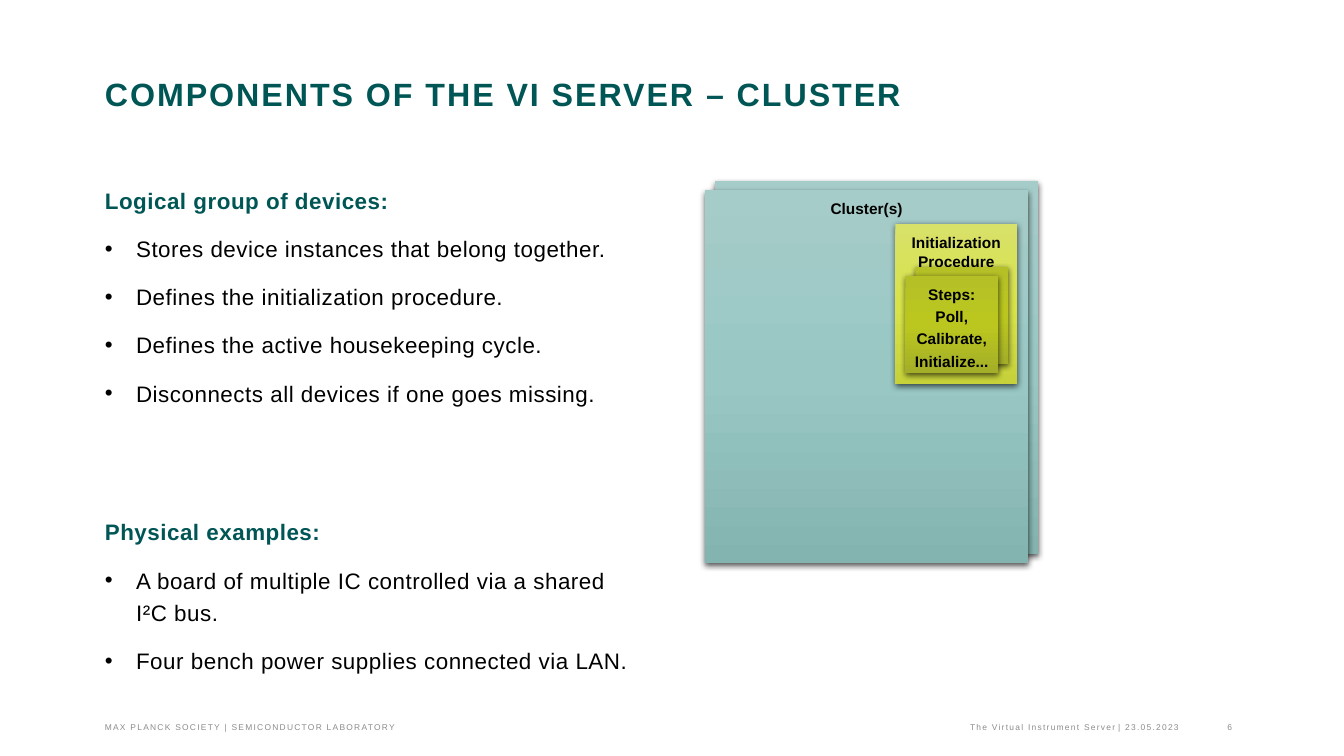
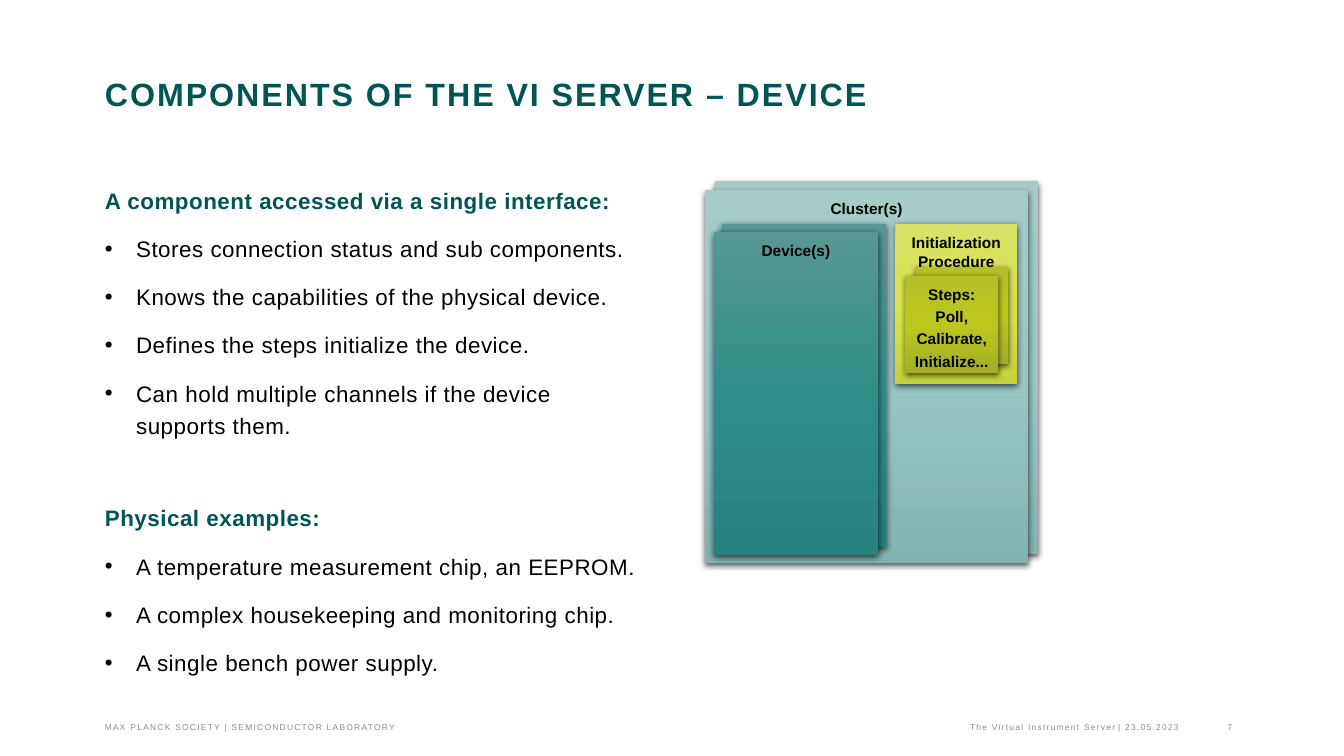
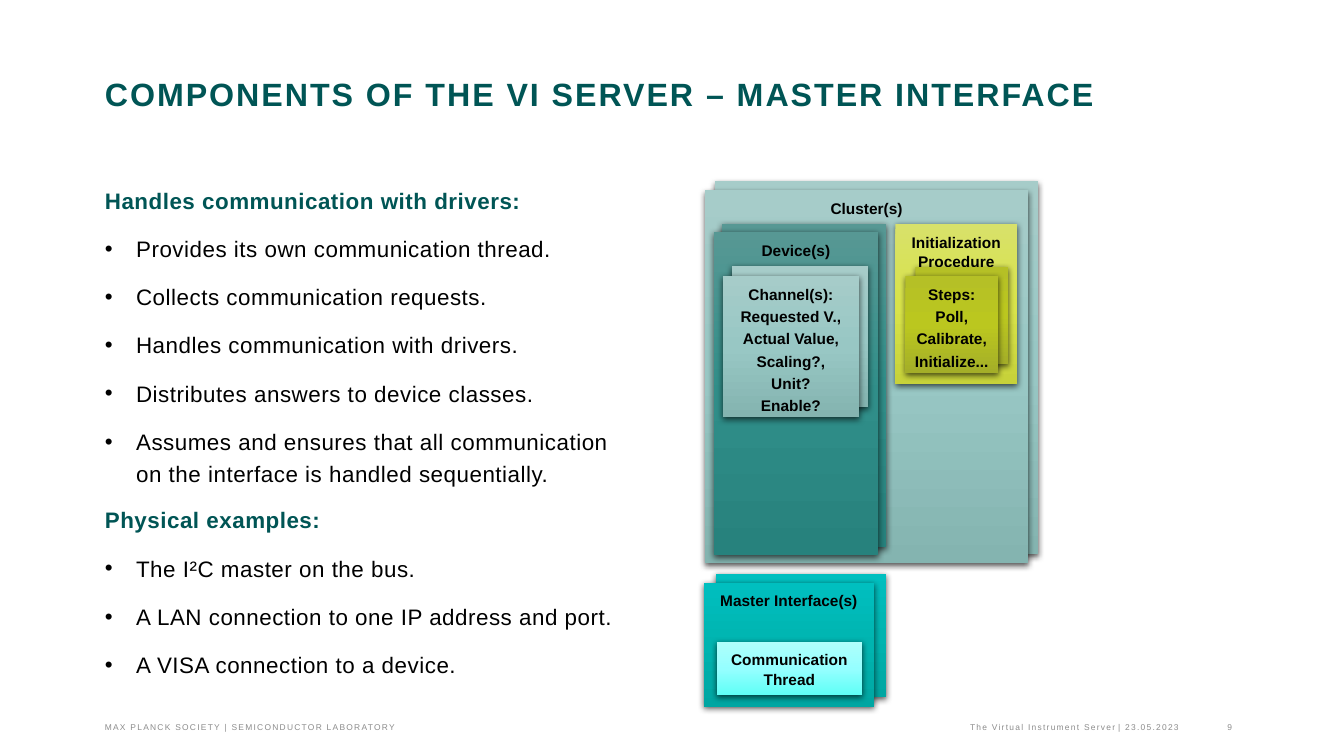
from lxml.etree import SubElement
from pptx import Presentation
from pptx.dml.color import RGBColor
from pptx.enum.shapes import MSO_SHAPE
from pptx.enum.text import MSO_ANCHOR, PP_ALIGN
from pptx.oxml import parse_xml
from pptx.oxml.ns import nsdecls, qn
from pptx.util import Inches, Pt

FONT = "Arial"
DARK_TEAL, GREY, BLACK = "005555", "8C8C8C", "000000"
PALE_TEAL = ("A6CCC9", "98C7C4", "84B4B0")
TEAL = ("579894", "308E89", "27827D")
LIME = ("D8E16A", "D8E34A", "C7D23A")
OLIVE = ("B5C026", "BBC71F", "A4AE28")
TURQUOISE = ("00BFBF", "00B4B0", "00A6A2")
AQUA = ("AFFFFB", "95FFFF", "5EFFF6")

LEFT = 1.04
BULLET_INDENT = 0.31
BOX_INSET = 0.08
HEADING_GAP = 10
BULLET_GAP = 11.5

SLIDES = [
    {
        "number": "6",
        "topic": "CLUSTER",
        "heading": "Logical group of devices:",
        "facts": [
            "Stores device instances that belong together.",
            "Defines the initialization procedure.",
            "Defines the active housekeeping cycle.",
            "Disconnects all devices if one goes missing.",
        ],
        "examples_gap": 76,
        "examples": [
            "A board of multiple IC controlled via a shared I²C bus.",
            "Four bench power supplies connected via LAN.",
        ],
        "parts": ["cluster", "initialization"],
    },
    {
        "number": "7",
        "topic": "DEVICE",
        "heading": "A component accessed via a single interface:",
        "facts": [
            "Stores connection status and sub components.",
            "Knows the capabilities of the physical device.",
            "Defines the steps initialize the device.",
            "Can hold multiple channels if the device supports them.",
        ],
        "examples_gap": 43,
        "examples": [
            "A temperature measurement chip, an EEPROM.",
            "A complex housekeeping and monitoring chip.",
            "A single bench power supply.",
        ],
        "parts": ["cluster", "device", "initialization"],
    },
    {
        "number": "9",
        "topic": "MASTER INTERFACE",
        "heading": "Handles communication with drivers:",
        "facts": [
            "Provides its own communication thread.",
            "Collects communication requests.",
            "Handles communication with drivers.",
            "Distributes answers to device classes.",
            "Assumes and ensures that all communication on the interface "
            "is handled sequentially.",
        ],
        "examples_gap": HEADING_GAP,
        "examples": [
            "The I²C master on the bus.",
            "A LAN connection to one IP address and port.",
            "A VISA connection to a device.",
        ],
        "parts": ["cluster", "device", "channel", "master", "initialization"],
    },
]


def rgb(color):
    return RGBColor.from_string(color)


def format_runs(paragraph, size, color, bold=False, tracking=0):
    """Tracking is the letter spacing in points."""
    for run in paragraph.runs:
        run.font.name = FONT
        run.font.size = Pt(size)
        run.font.bold = bold
        run.font.color.rgb = rgb(color)
        if tracking:
            run.font._element.set("spc", str(round(tracking * 100)))


def set_insets(frame, inset, right=None):
    frame.margin_left = frame.margin_top = frame.margin_bottom = Inches(inset)
    frame.margin_right = Inches(inset if right is None else right)


def add_text_frame(slide, left, top, width, height):
    box = slide.shapes.add_textbox(
        Inches(left), Inches(top), Inches(width), Inches(height))
    frame = box.text_frame
    frame.word_wrap = True
    set_insets(frame, 0)
    return frame


def add_title(slide, topic):
    frame = add_text_frame(slide, LEFT, 0.76, 11.26, 1.05)
    frame.text = f"COMPONENTS OF THE VI SERVER – {topic}"
    title = frame.paragraphs[0]
    title.line_spacing = Pt(26)
    format_runs(title, 23, DARK_TEAL, True, 1.4)


def add_footer(slide, number):
    footer_parts = [
        ("MAX PLANCK SOCIETY | SEMICONDUCTOR LABORATORY",
         LEFT, 2.93, PP_ALIGN.LEFT, 0),
        ("The Virtual Instrument Server", 3.97, 7.09, PP_ALIGN.RIGHT, 0),
        ("|", 11.09, 0.05, PP_ALIGN.LEFT, 0),
        ("23.05.2023", 11.16, 0.61, PP_ALIGN.LEFT, 0),
        (number, 11.86, 0.44, PP_ALIGN.RIGHT, 0.08),
    ]
    for text, left, width, align, right_inset in footer_parts:
        frame = add_text_frame(slide, left, 7.06, width, 0.2)
        frame.vertical_anchor = MSO_ANCHOR.BOTTOM
        set_insets(frame, 0, right_inset)
        frame.text = text
        frame.paragraphs[0].alignment = align
        format_runs(frame.paragraphs[0], 6, GREY, tracking=0.9)


def add_bullet(paragraph):
    properties = paragraph._p.get_or_add_pPr()
    properties.set("marL", str(Inches(BULLET_INDENT)))
    properties.set("indent", str(-Inches(BULLET_INDENT)))
    SubElement(properties, qn("a:buFont")).set("typeface", FONT)
    SubElement(properties, qn("a:buChar")).set("char", "•")


def add_description(slide, content):
    frame = add_text_frame(slide, LEFT, 1.8, 5.31, 5.2)
    sections = [
        (content["heading"], 0, content["facts"]),
        ("Physical examples:", content["examples_gap"], content["examples"]),
    ]
    lines = []
    for heading, gap, bullets in sections:
        lines.append((heading, gap, True))
        lines += [(bullet, BULLET_GAP, False) for bullet in bullets]
    frame.text = "\n".join(text for text, _, _ in lines)
    for paragraph, (_, gap, is_heading) in zip(frame.paragraphs, lines):
        if not is_heading:
            add_bullet(paragraph)
        paragraph.line_spacing = Pt(23)
        paragraph.space_before = Pt(gap)
        format_runs(paragraph, 16, DARK_TEAL if is_heading else BLACK,
                    is_heading, 0.4)


def style_panel(panel, gradient):
    """Downward gradient, no outline and a soft shadow below."""
    stops = "".join(
        f'<a:gs pos="{position}"><a:srgbClr val="{color}"/></a:gs>'
        for position, color in zip((0, 50000, 100000), gradient))
    effects = [
        f'<a:gradFill {nsdecls("a")} rotWithShape="1"><a:gsLst>{stops}</a:gsLst>'
        '<a:lin ang="5400000" scaled="0"/></a:gradFill>',
        f'<a:ln {nsdecls("a")}><a:noFill/></a:ln>',
        f'<a:effectLst {nsdecls("a")}><a:outerShdw blurRad="{Pt(4.5)}" '
        f'dist="{Pt(1.5)}" dir="5400000" rotWithShape="0">'
        f'<a:srgbClr val="{BLACK}"><a:alpha val="63000"/></a:srgbClr>'
        '</a:outerShdw></a:effectLst>',
    ]
    for effect in effects:
        panel._element.spPr.append(parse_xml(effect))


def add_panel(slide, bounds, gradient, label="", anchor=MSO_ANCHOR.TOP):
    panel = slide.shapes.add_shape(
        MSO_SHAPE.RECTANGLE, *(Inches(length) for length in bounds))
    style_panel(panel, gradient)
    if not label:
        return
    frame = panel.text_frame
    frame.word_wrap = True
    frame.vertical_anchor = anchor
    set_insets(frame, BOX_INSET)
    frame.text = label
    for index, paragraph in enumerate(frame.paragraphs):
        paragraph.alignment = PP_ALIGN.CENTER
        paragraph.line_spacing = 1.05
        paragraph.space_before = Pt(2 if index else 0)
        format_runs(paragraph, 11, BLACK, True)


def add_stack(slide, bounds, gradient, label, right=0.1, up=0.09):
    """A labelled panel with a second one showing behind it."""
    left, top, width, height = bounds
    add_panel(slide, (left + right, top - up, width, height), gradient)
    add_panel(slide, bounds, gradient, label)


def add_cluster(slide):
    add_stack(slide, (6.99, 1.89, 3.21, 3.7), PALE_TEAL, "Cluster(s)")


def add_device(slide):
    add_stack(slide, (7.08, 2.3, 1.63, 3.21), TEAL, "Device(s)", 0.08, 0.08)


def add_channel(slide):
    add_stack(slide, (7.17, 2.74, 1.35, 1.4), PALE_TEAL,
              "Channel(s):\nRequested V.,\nActual Value,\nScaling?,\nUnit?\nEnable?",
              0.09, 0.1)


def add_master(slide):
    add_stack(slide, (6.98, 5.78, 1.69, 1.23), TURQUOISE,
              "Master Interface(s)", 0.12)
    add_panel(slide, (7.11, 6.37, 1.44, 0.53), AQUA,
              "Communication Thread", MSO_ANCHOR.MIDDLE)


def add_initialization(slide):
    add_panel(slide, (8.88, 2.22, 1.21, 1.59), LIME, "Initialization Procedure")
    add_stack(slide, (8.98, 2.74, 0.92, 0.96), OLIVE,
              "Steps:\nPoll,\nCalibrate,\nInitialize...")


PART_BUILDERS = {
    "cluster": add_cluster,
    "device": add_device,
    "channel": add_channel,
    "master": add_master,
    "initialization": add_initialization,
}


def main():
    presentation = Presentation()
    presentation.slide_width = Inches(13.33)
    presentation.slide_height = Inches(7.5)
    for content in SLIDES:
        slide = presentation.slides.add_slide(presentation.slide_layouts[6])
        add_title(slide, content["topic"])
        add_description(slide, content)
        for part in content["parts"]:
            PART_BUILDERS[part](slide)
        add_footer(slide, content["number"])
    presentation.save("out.pptx")


if __name__ == "__main__":
    main()
